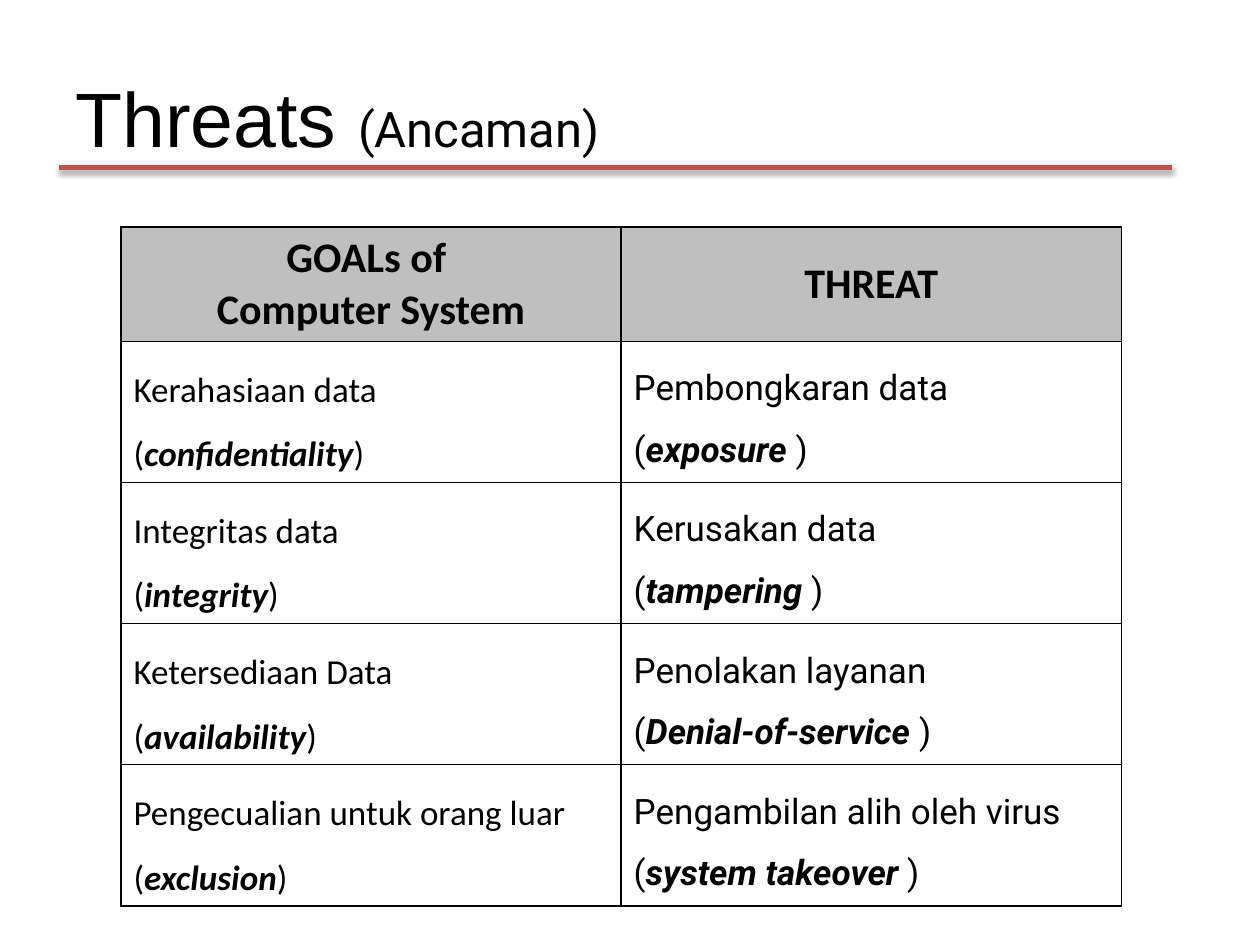
from lxml.etree import SubElement
from pptx import Presentation
from pptx.dml.color import RGBColor
from pptx.enum.shapes import MSO_CONNECTOR as Connector
from pptx.enum.text import MSO_ANCHOR as Anchor, PP_ALIGN as Align
from pptx.oxml import parse_xml
from pptx.oxml.ns import nsdecls, qn
from pptx.util import Inches, Pt

TITLE = [("Threats ", "Arial", 44), ("(Ancaman)", "Roboto", 28)]
HEADERS = [["GOALs of ", "Computer System"], ["THREAT"]]
# Each cell: Indonesian description, English term
ROWS = [
    [("Kerahasiaan data", "confidentiality"), ("Pembongkaran data", "exposure ")],
    [("Integritas data", "integrity"), ("Kerusakan data", "tampering ")],
    [("Ketersediaan Data", "availability"), ("Penolakan layanan", "Denial-of-service ")],
    [("Pengecualian untuk orang luar", "exclusion"),
     ("Pengambilan alih oleh virus", "system takeover ")],
]
COLUMN_FONTS = ["Calibri", "Roboto"]
BLACK, WHITE, GRAY, RED = "000000", "FFFFFF", "BFBFBF", "C0504D"
COLUMN_WIDTH, HEADER_HEIGHT, ROW_HEIGHT = 3.97, 0.91, 1.12


def color(value):
    return RGBColor.from_string(value)


def set_font(font, name, size, bold=False):
    font.name, font.size, font.bold = name, Pt(size), bold
    font.color.rgb = color(BLACK)


def add_title(slide):
    box = slide.shapes.add_textbox(Inches(0.5), Inches(0.3), Inches(9), Inches(1.25))
    frame = box.text_frame
    frame.word_wrap = True
    frame.vertical_anchor = Anchor.MIDDLE
    for text, name, size in TITLE:
        run = frame.paragraphs[0].add_run()
        run.text = text
        set_font(run.font, name, size)


def add_rule(slide):
    rule = slide.shapes.add_connector(
        Connector.STRAIGHT, Inches(0.47), Inches(1.33), Inches(9.3), Inches(1.33))
    rule.line.color.rgb = color(RED)
    rule.line.width = Pt(3)
    effects = SubElement(rule._element.spPr, qn("a:effectLst"))
    effects.append(parse_xml(
        f'<a:outerShdw {nsdecls("a")} blurRad="{Pt(3.1)}" dist="{Pt(1.8)}" '
        f'dir="5400000" rotWithShape="0"><a:srgbClr val="{BLACK}">'
        '<a:alpha val="35000"/></a:srgbClr></a:outerShdw>'))


def style_cell(cell, fill):
    cell.fill.solid()
    cell.fill.fore_color.rgb = color(fill)
    properties = cell._tc.get_or_add_tcPr()
    for index, side in enumerate("LRTB"):  # borders must precede the fill
        properties.insert(index, parse_xml(
            f'<a:ln{side} {nsdecls("a")} w="{Pt(1)}"><a:solidFill>'
            f'<a:srgbClr val="{BLACK}"/></a:solidFill></a:ln{side}>'))


def fill_header(cell, lines):
    style_cell(cell, GRAY)
    cell.vertical_anchor = Anchor.MIDDLE
    cell.text_frame.text = "\n".join(lines)
    for paragraph in cell.text_frame.paragraphs:
        paragraph.alignment = Align.CENTER
        set_font(paragraph.font, "Calibri", 24, bold=True)


def fill_body(cell, description, term, font_name):
    style_cell(cell, WHITE)
    frame = cell.text_frame
    frame.text = description
    term_line = frame.add_paragraph()
    for text in ("(", term, ")"):
        run = term_line.add_run()
        run.text = text
        if text == term:
            run.font.bold = run.font.italic = True
    for paragraph in frame.paragraphs:
        paragraph.line_spacing = 1.5
        set_font(paragraph.font, font_name, 20)


def add_threat_table(slide):
    heights = [HEADER_HEIGHT] + [ROW_HEIGHT] * len(ROWS)
    table = slide.shapes.add_table(
        len(heights), len(HEADERS), Inches(0.96), Inches(1.8),
        Inches(COLUMN_WIDTH * len(HEADERS)), Inches(sum(heights))).table
    for row, height in zip(table.rows, heights):
        row.height = Inches(height)
    for column, lines in enumerate(HEADERS):
        table.columns[column].width = Inches(COLUMN_WIDTH)
        fill_header(table.cell(0, column), lines)
        for row, entries in enumerate(ROWS, start=1):
            fill_body(table.cell(row, column), *entries[column], COLUMN_FONTS[column])


def main():
    presentation = Presentation()
    presentation.slide_width, presentation.slide_height = Inches(10), Inches(7.5)
    slide = presentation.slides.add_slide(presentation.slide_layouts[6])
    add_title(slide)
    add_rule(slide)
    add_threat_table(slide)
    presentation.save("out.pptx")


if __name__ == "__main__":
    main()
